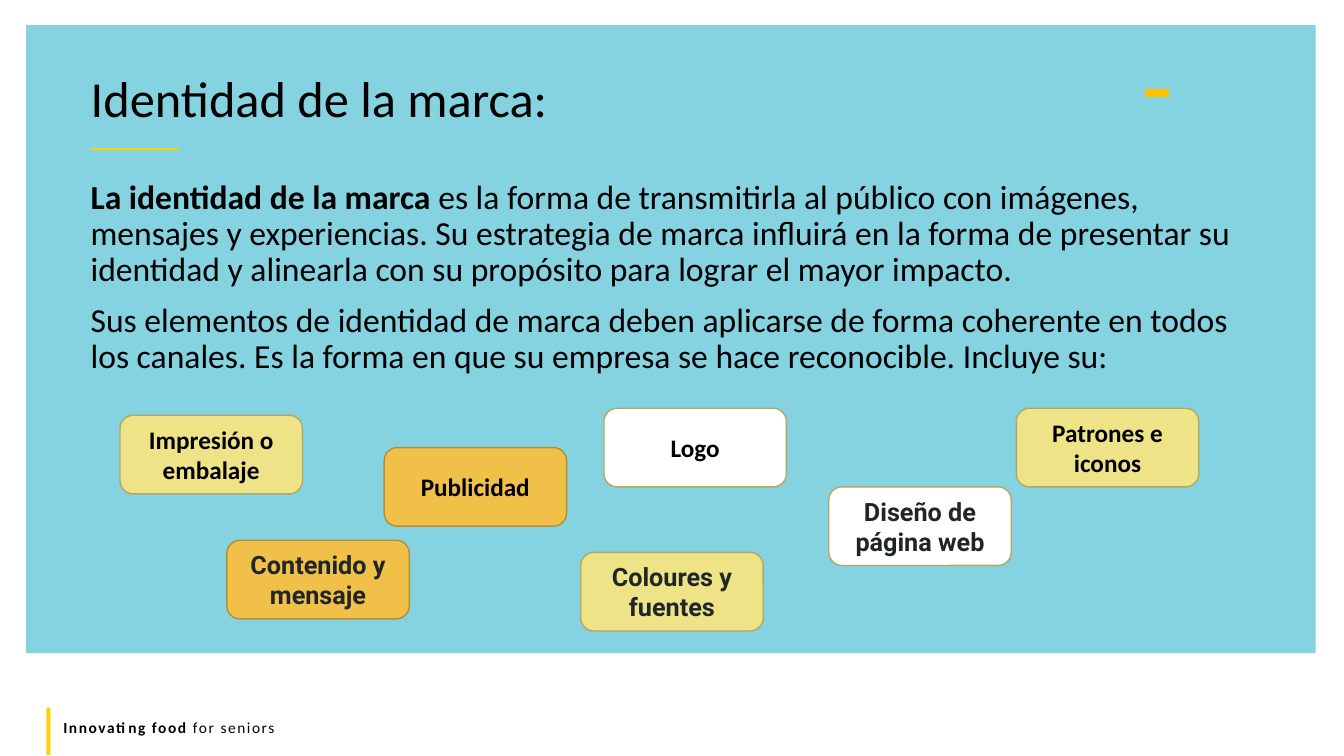
from pptx import Presentation
from pptx import util as u
from pptx.dml.color import RGBColor
from pptx.enum import shapes, text

PX = 9144
BLACK, INK = "000000", "202527"
WHITE, LEMON, AMBER, GOLD = "FFFFFF", "EEE387", "F0C049", "FFD100"
OLIVE, BROWN = "B0A864", "B28E36"


def paint(kind, box, fill, line=None):
    shape = deck.shapes.add_shape(kind, *[n * PX for n in box])
    shape.shadow.inherit = False
    shape.fill.solid()
    shape.fill.fore_color.rgb = RGBColor.from_string(fill)
    if line:
        shape.line.color.rgb = RGBColor.from_string(line)
        shape.line.width = u.Pt(1)
    else:
        shape.line.fill.background()
    return shape


def write(para, words, size, bold=False, font="Calibri", color=BLACK):
    run = para.add_run()
    run.text = words
    run.font.size = u.Pt(size)
    run.font.bold = bold
    run.font.name = font
    run.font.color.rgb = RGBColor.from_string(color)
    return run


show = Presentation()
show.slide_width, show.slide_height = 1333 * PX, 750 * PX
deck = show.slides.add_slide(show.slide_layouts[5])

RECT = shapes.MSO_SHAPE.RECTANGLE
ROUND = shapes.MSO_SHAPE.ROUNDED_RECTANGLE

panel = paint(RECT, (26, 25, 1279, 623), "85D2E1")
title = deck.shapes.title
panel.element.addnext(title.element)
title.left, title.top, title.width, title.height = [n * PX for n in (80, 70, 1182, 64)]
frame = title.text_frame
frame.word_wrap = True
frame.auto_size = text.MSO_AUTO_SIZE.NONE
frame.vertical_anchor = text.MSO_ANCHOR.MIDDLE
head = frame.paragraphs[0]
head.alignment = text.PP_ALIGN.LEFT
head.line_spacing = 0.8
write(head, "Identidad de la marca:", 36)

paint(RECT, (90, 147, 87, 2), GOLD)
paint(RECT, (46, 702, 4, 47), GOLD)
paint(RECT, (1136, 89, 23, 7), "FFC000", "FFC000")

foot = deck.shapes.add_textbox(*[n * PX for n in (53, 707, 1200, 29)]).text_frame
foot.word_wrap = True
for words, bold in (("Innovating food ", True), ("for seniors", False)):
    run = write(foot.paragraphs[0], words, 11, bold)
    run.font._element.set("spc", "110")

story = [
    [("La identidad de la marca", True),
     (" es la forma de transmitirla al público con imágenes, mensajes y experiencias. "
      "Su estrategia de marca influirá en la forma de presentar su identidad y alinearla "
      "con su propósito para lograr el mayor impacto.", False)],
    [("Sus elementos de identidad de marca deben aplicarse de forma coherente en todos "
      "los canales. Es la forma en que su empresa se hace reconocible. Incluye su:", False)],
]
body = deck.shapes.add_textbox(*[n * PX for n in (80, 174, 1182, 441)]).text_frame
body.word_wrap = True
for i, parts in enumerate(story):
    para = body.add_paragraph() if i else body.paragraphs[0]
    para.line_spacing = 0.9
    para.space_before = u.Pt(10 if i else 0)
    for words, bold in parts:
        write(para, words, 24, bold)

cards = [
    (119, 412, "Impresión o embalaje", LEMON, OLIVE, "Calibri", BLACK),
    (381, 444, "Publicidad", AMBER, BROWN, "Calibri", BLACK),
    (225, 536, "Contenido y mensaje", AMBER, BROWN, "Roboto", INK),
    (1008, 405, "Patrones e iconos", LEMON, OLIVE, "Calibri", BLACK),
    (822, 483, "Diseño de página web", WHITE, OLIVE, "Roboto", INK),
    (576, 548, "Coloures y fuentes", LEMON, OLIVE, "Roboto", INK),
    (599, 405, "Logo", WHITE, OLIVE, "Calibri", BLACK),
]
for left, top, words, fill, line, font, color in cards:
    frame = paint(ROUND, (left, top, 181, 78), fill, line).text_frame
    frame.word_wrap = True
    frame.vertical_anchor = text.MSO_ANCHOR.MIDDLE
    para = frame.paragraphs[0]
    para.alignment = text.PP_ALIGN.CENTER
    write(para, words, 18, True, font, color)

show.save("out.pptx")
